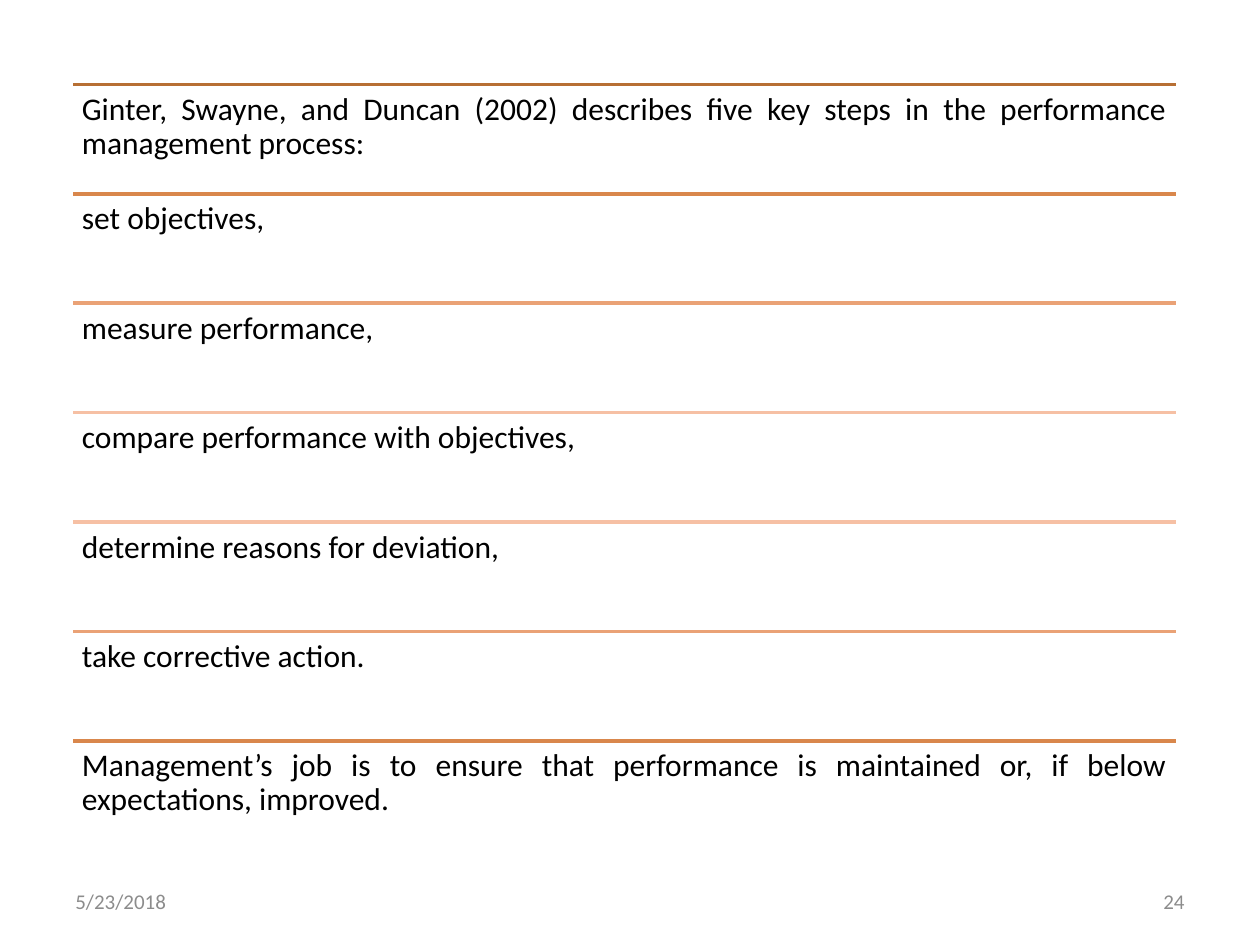
from dataclasses import dataclass

from pptx import Presentation
from pptx.dml.color import RGBColor
from pptx.enum.shapes import MSO_CONNECTOR
from pptx.enum.text import MSO_ANCHOR as Anchor, PP_ALIGN as Align
from pptx.oxml.ns import qn
from pptx.slide import Slide
from pptx.util import Inches, Pt
from lxml.etree import SubElement

LEFT, WIDTH = 0.58, 8.75
FIRST_TOP, LAST_TOP = 0.67, 5.88
ROW_HEIGHT = 0.87


@dataclass
class Row:
    text: str
    color: str


ROWS = [
    Row("Ginter, Swayne, and Duncan (2002) describes five key steps "
        "in the performance management process:", "B76F34"),
    Row("set objectives,", "D9874C"),
    Row("measure performance,", "EAA276"),
    Row("compare performance with objectives,", "F6C0A4"),
    Row("determine reasons for deviation,", "F6C0A4"),
    Row("take corrective action.", "EAA276"),
    Row("Management’s job is to ensure that performance is maintained or, "
        "if below expectations, improved.", "D9874C"),
]


def rgb(value: str) -> RGBColor:
    return RGBColor.from_string(value)


def add_text(s: Slide, text: str, left: float, top: float, width: float,
             height: float, *, size: int = 18, color: str = "000000",
             align: Align = Align.LEFT, anchor: Anchor = Anchor.TOP,
             inset_x: float = 0.1, inset_y: float = 0.05,
             spacing: float = 1.0) -> None:
    sp = s.shapes.add_textbox(Inches(left), Inches(top), Inches(width), Inches(height))
    tf = sp.text_frame
    tf.word_wrap = True
    tf.vertical_anchor = anchor
    tf.margin_left = tf.margin_right = Inches(inset_x)
    tf.margin_top = tf.margin_bottom = Inches(inset_y)
    p = tf.paragraphs[0]
    p.alignment = align
    p.line_spacing = spacing
    r = p.add_run()
    r.text = text
    r.font.name = "Calibri"
    r.font.size = Pt(size)
    r.font.color.rgb = rgb(color)


def add_rule(s: Slide, top: float, color: str) -> None:
    y = Inches(top)
    cxn = s.shapes.add_connector(
        MSO_CONNECTOR.STRAIGHT, Inches(LEFT), y, Inches(LEFT + WIDTH), y)
    cxn.line.color.rgb = rgb(color)
    cxn.line.width = Pt(2)
    SubElement(cxn._element.spPr, qn("a:effectLst"))


def add_row(s: Slide, row: Row, top: float) -> None:
    add_rule(s, top, row.color)
    add_text(s, row.text, LEFT, top, WIDTH, ROW_HEIGHT, align=Align.JUSTIFY,
             inset_x=0.07, inset_y=0.07, spacing=0.9)


def add_footer(s: Slide, text: str, left: float, align: Align) -> None:
    add_text(s, text, left, 6.95, 2.33, 0.4, size=12, color="8C8C8C",
             align=align, anchor=Anchor.MIDDLE)


def main() -> None:
    prs = Presentation()
    prs.slide_width, prs.slide_height = Inches(10), Inches(7.5)
    s = prs.slides.add_slide(prs.slide_layouts[6])
    add_footer(s, "5/23/2018", 0.5, Align.LEFT)
    add_footer(s, "24", 7.17, Align.RIGHT)
    pitch = (LAST_TOP - FIRST_TOP) / (len(ROWS) - 1)
    for i, row in enumerate(ROWS):
        add_row(s, row, FIRST_TOP + i * pitch)
    prs.save("out.pptx")


if __name__ == "__main__":
    main()
